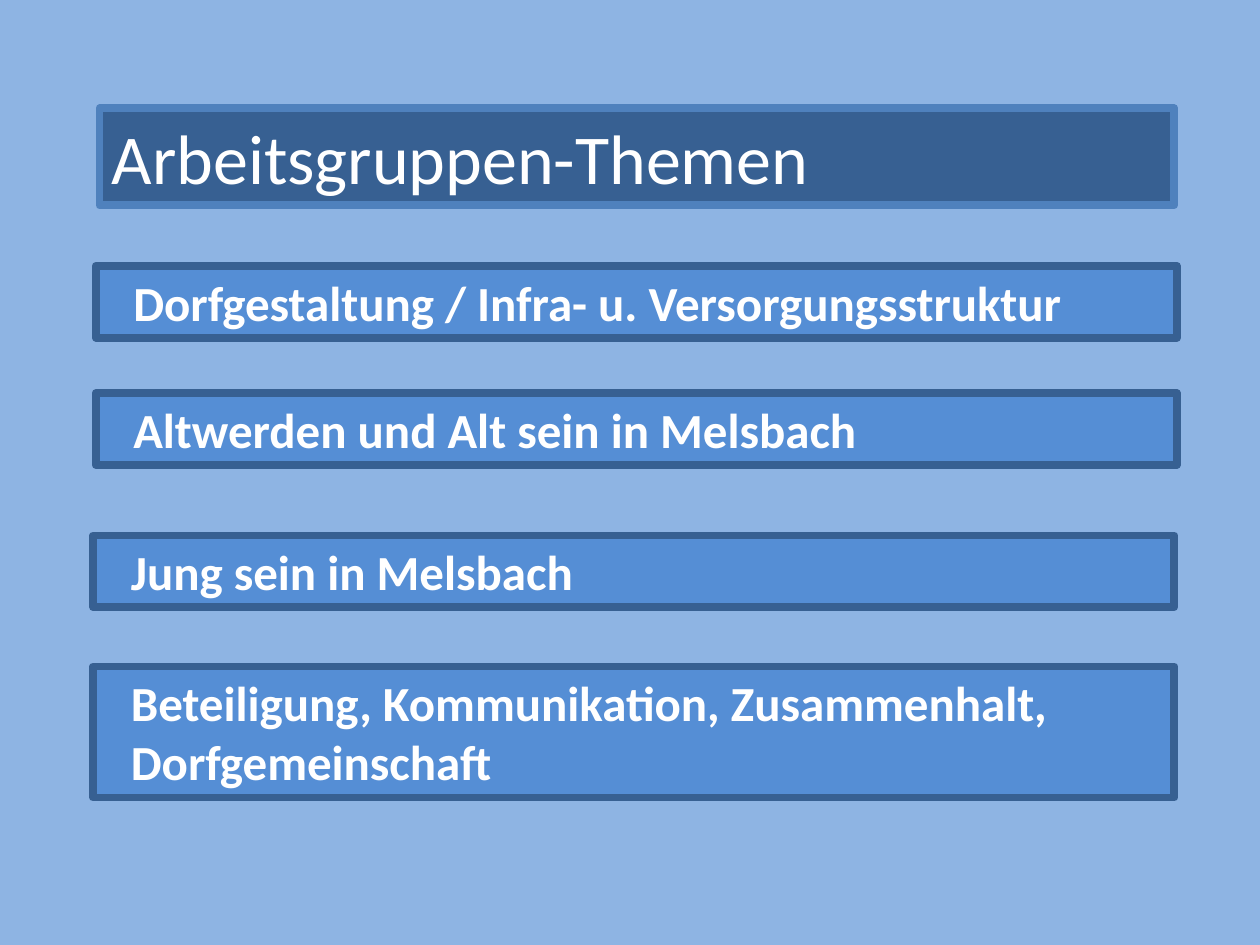
from dataclasses import dataclass

from pptx import Presentation
from pptx.dml.color import RGBColor
from pptx.enum.text import MSO_AUTO_SIZE
from pptx.util import Inches, Pt

SKY = RGBColor(0x8E, 0xB4, 0xE3)
NAVY = RGBColor(0x37, 0x60, 0x92)
STEEL = RGBColor(0x4F, 0x81, 0xBD)
BLUE = RGBColor(0x55, 0x8E, 0xD5)
WHITE = RGBColor(0xFF, 0xFF, 0xFF)
FIT = MSO_AUTO_SIZE.SHAPE_TO_FIT_TEXT

COLS, ROWS = 100, 75
CELL = Inches(0.1)
WIDTH = 85.8  # columns in a topic bar
LOW, HIGH = 5.7, 10.4  # rows in a bar of one or two lines


@dataclass(frozen=True)
class Topic:
    text: str
    col: float
    row: float
    rows: float = LOW


TOPICS = (
    Topic("Dorfgestaltung / Infra- u. Versorgungsstruktur", 7.6, 21.1),
    Topic("Altwerden und Alt sein in Melsbach", 7.6, 31.2),
    Topic("Jung sein in Melsbach", 7.4, 42.5),
    Topic("Beteiligung, Kommunikation, Zusammenhalt, Dorfgemeinschaft",
          7.4, 52.9, HIGH),
)


def grid(cells: float) -> int:
    return round(cells * CELL)


def write(frame, text: str, *, size: int, bold: bool = False,
          indent: float = 0) -> None:
    frame.word_wrap = True
    frame.auto_size = FIT
    para = frame.paragraphs[0]
    props = para._p.get_or_add_pPr()
    props.set("marL", str(grid(indent)))
    props.set("indent", "0")
    run = para.add_run()
    run.text = text
    run.font.name = "Calibri"
    run.font.size = Pt(size)
    run.font.bold = bold
    run.font.color.rgb = WHITE


def draw_bar(slide, col: float, row: float, cols: float, rows: float,
             fill: RGBColor, edge: RGBColor):
    """Draw a framed bar and return its text frame."""
    bar = slide.shapes.add_textbox(*map(grid, (col, row, cols, rows)))
    bar.fill.solid()
    bar.fill.fore_color.rgb = fill
    bar.line.color.rgb = edge
    bar.line.width = Pt(4.5)
    return bar.text_frame


def draw_topic(slide, topic: Topic) -> None:
    frame = draw_bar(slide, topic.col, topic.row, WIDTH, topic.rows,
                     BLUE, NAVY)
    write(frame, topic.text, size=28, bold=True, indent=2)


def main() -> None:
    deck = Presentation()
    deck.slide_width, deck.slide_height = grid(COLS), grid(ROWS)
    slide = deck.slides.add_slide(deck.slide_layouts[6])
    back = slide.background.fill
    back.solid()
    back.fore_color.rgb = SKY

    title = draw_bar(slide, 7.9, 8.6, 85.3, 7.7, NAVY, STEEL)
    write(title, "Arbeitsgruppen-Themen", size=40)
    for topic in TOPICS:
        draw_topic(slide, topic)
    deck.save("out.pptx")


if __name__ == "__main__":
    main()
